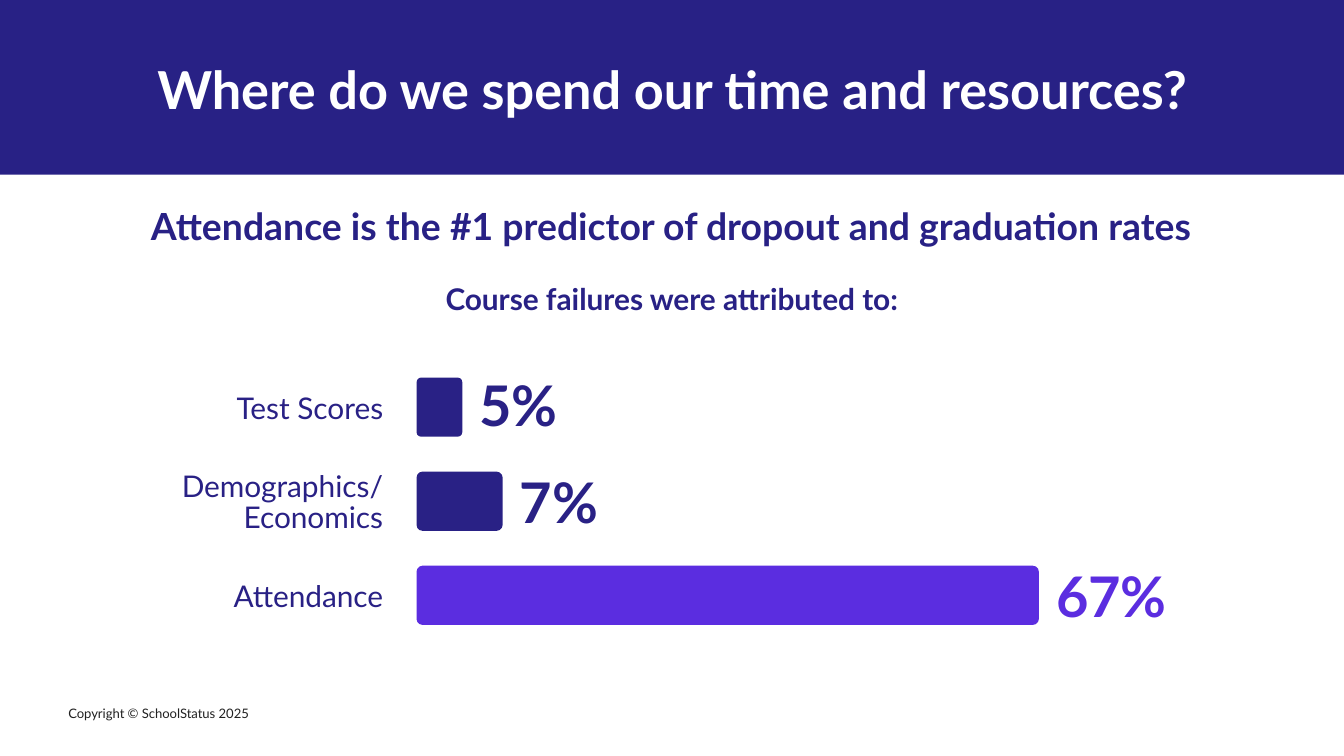
from pptx import Presentation
from pptx.dml.color import RGBColor
from pptx.enum.shapes import MSO_SHAPE as Shape
from pptx.enum.text import MSO_ANCHOR as Anchor, PP_ALIGN as Align
from pptx.util import Inches, Pt

# Content
NAVY, INDIGO, VIOLET = "282185", "292185", "5B2DE0"
WHITE, INK = "FFFFFF", "212121"

# text, (left, top, width, height), inset, anchor, format values
HEADINGS = [
    ("Where do we spend our time and resources?", (0.5, 0.38, 9, 0.53), 0.1, Anchor.TOP,
     dict(size=28, color=WHITE, bold=True, align=Align.CENTER, spacing=0.9)),
    ("Attendance is the #1 predictor of dropout and graduation rates",
     (0.56, 1.56, 8.87, 0.29), 0, Anchor.TOP,
     dict(size=20, color=NAVY, bold=True, align=Align.CENTER, spacing=0.85)),
    ("Course failures were attributed to:", (2.1, 2.05, 5.8, 0.39), 0.05, Anchor.MIDDLE,
     dict(size=16, color=NAVY, bold=True, align=Align.CENTER, spacing=0.85)),
    ("Copyright © SchoolStatus 2025", (0.41, 5.19, 3.23, 0.34), 0.1, Anchor.TOP,
     dict(size=7, color=INK)),
]

# label, value, bar width, middle of the value, colour
CAUSES = [
    ("Test Scores", "5%", 0.34, 3.01, INDIGO),
    ("Demographics/\vEconomics", "7%", 0.64, 3.73, INDIGO),
    ("Attendance", "67%", 4.63, 4.43, VIOLET),
]
BAR_LEFT, BAR_TOP, BAR_HEIGHT, BAR_STEP = 3.1, 2.81, 0.44, 0.7
LABEL_RIGHT, LABEL_WIDTH, LABEL_HEIGHT = 2.95, 2.4, 0.48
VALUE_GAP, VALUE_WIDTH, VALUE_HEIGHT = 0.03, 1.2, 0.58


def rgb(value):
    return RGBColor.from_string(value)


def add_block(page, kind, place, color):
    block = page.shapes.add_shape(kind, *map(Inches, place))
    block.shadow.inherit = False
    block.fill.solid()
    block.fill.fore_color.rgb = rgb(color)
    block.line.fill.background()
    return block


def add_text(page, text, place, inset, anchor, style):
    box = page.shapes.add_textbox(*map(Inches, place))
    frame = box.text_frame
    side = 0.1 if inset else 0
    settings = dict(word_wrap=True, vertical_anchor=anchor,
                    margin_left=Inches(side), margin_right=Inches(side),
                    margin_top=Inches(inset), margin_bottom=Inches(inset))
    for name, value in settings.items():
        setattr(frame, name, value)
    para = frame.paragraphs[0]
    para.text = text
    para.alignment = style.get("align", Align.LEFT)
    para.line_spacing = style.get("spacing", 1.0)
    for span in para.runs:
        fonts = dict(name="Lato", size=Pt(style["size"]), bold=style.get("bold", False))
        for name, value in fonts.items():
            setattr(span.font, name, value)
        span.font.color.rgb = rgb(style["color"])


# A 16:9 page
deck = Presentation()
deck.slide_width = Inches(10)
deck.slide_height = Inches(10 * 9 / 16)
page = deck.slides.add_slide(deck.slide_layouts[6])

# Title band and headings
add_block(page, Shape.RECTANGLE, (0, 0, 10, 1.3), NAVY)
for heading in HEADINGS:
    add_text(page, *heading)

# Bars, each with its label on the left and its value on the right
for row, (label, value, width, value_middle, color) in enumerate(CAUSES):
    top = BAR_TOP + row * BAR_STEP
    middle = top + BAR_HEIGHT / 2
    bar = add_block(page, Shape.ROUNDED_RECTANGLE, (BAR_LEFT, top, width, BAR_HEIGHT), color)
    bar.adjustments[0] = 0.1
    add_text(page, label,
             (LABEL_RIGHT - LABEL_WIDTH, middle + 0.02 - LABEL_HEIGHT / 2,
              LABEL_WIDTH, LABEL_HEIGHT), 0.05, Anchor.MIDDLE,
             dict(size=16, color=INDIGO, align=Align.RIGHT, spacing=0.85))
    add_text(page, value,
             (BAR_LEFT + width + VALUE_GAP, value_middle - VALUE_HEIGHT / 2,
              VALUE_WIDTH, VALUE_HEIGHT), 0.05, Anchor.MIDDLE,
             dict(size=30, color=color, bold=True))

deck.save("out.pptx")
